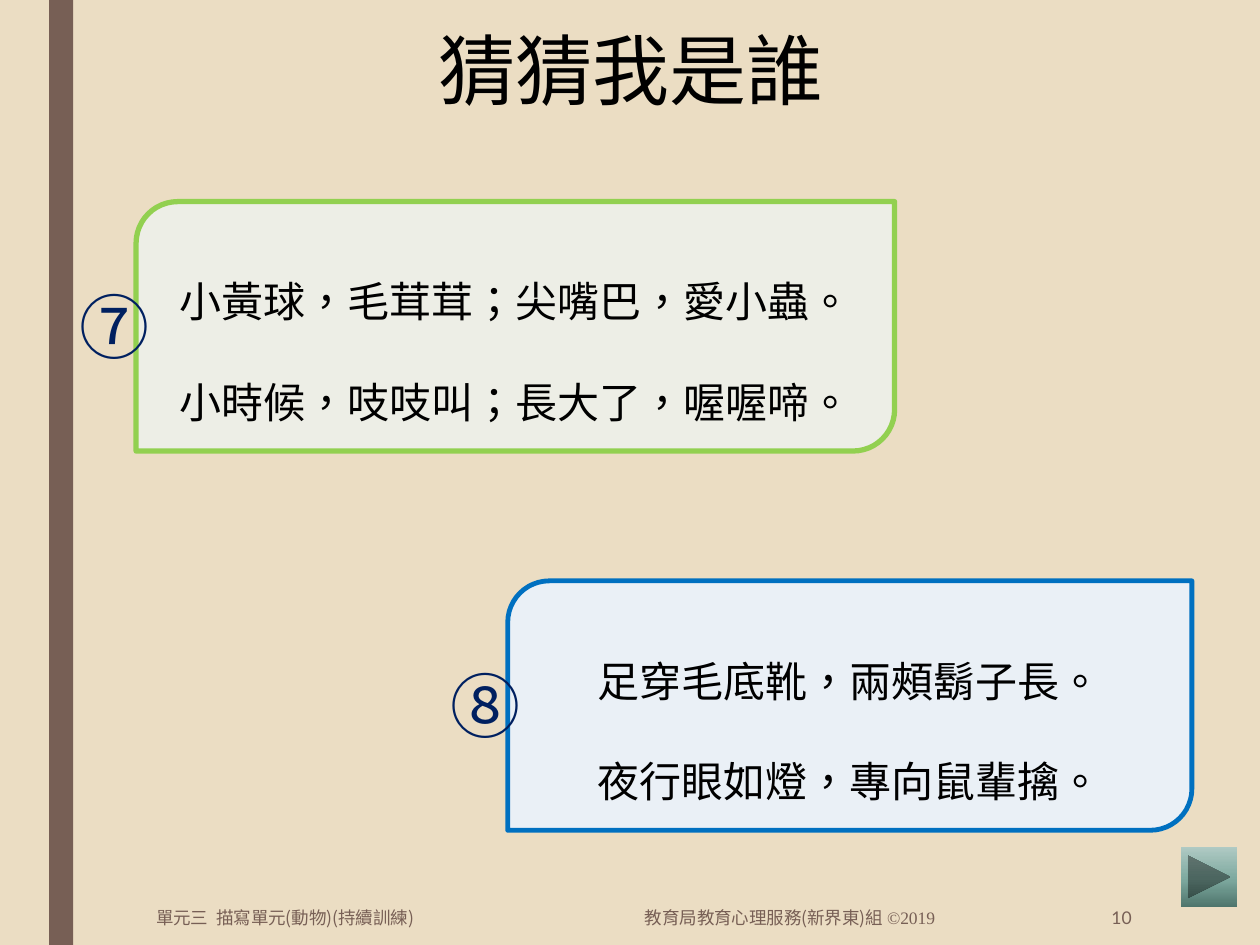
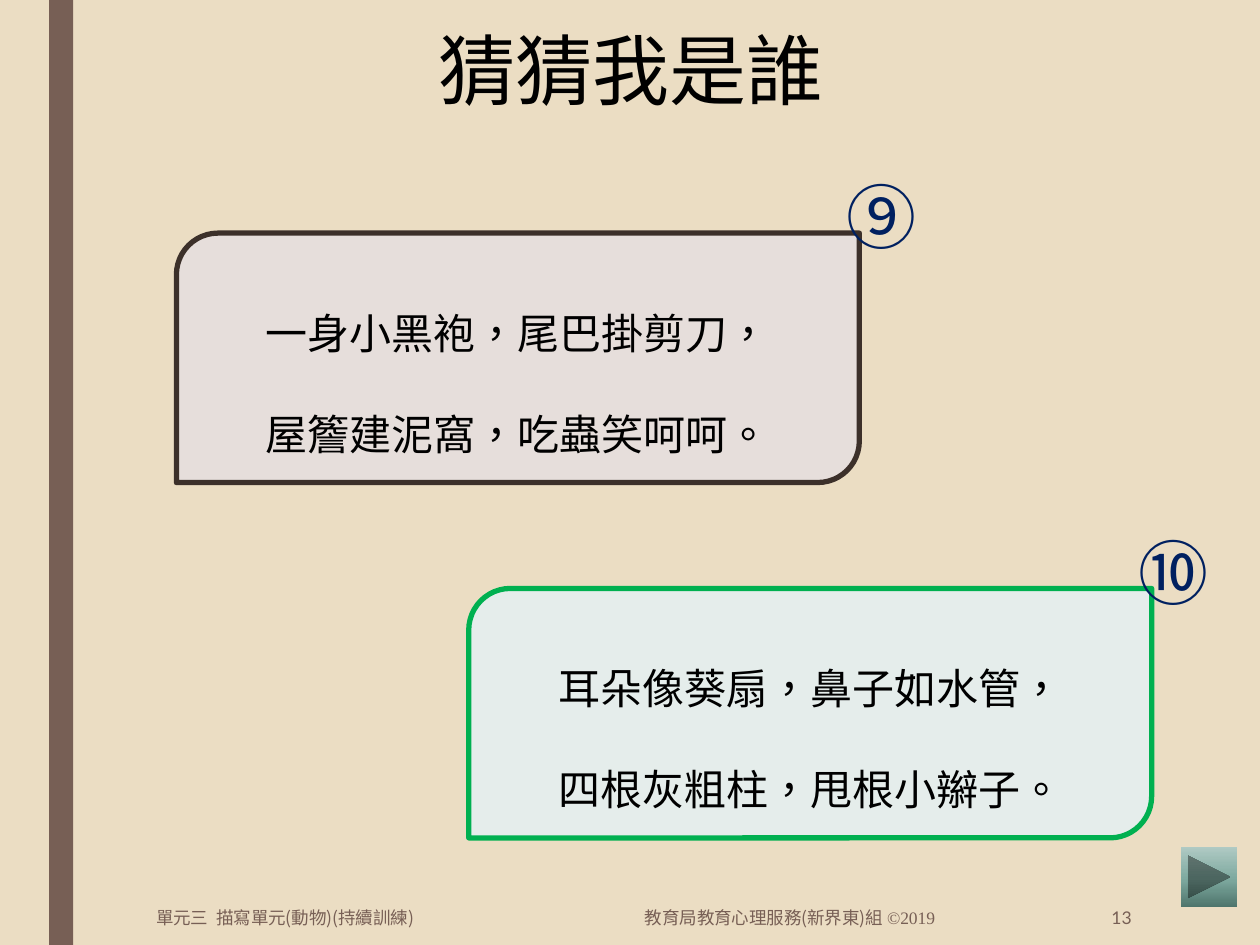
from lxml.etree import SubElement
from pptx import Presentation
from pptx.dml.color import RGBColor
from pptx.enum.shapes import MSO_SHAPE as Shape
from pptx.enum.text import MSO_ANCHOR as Anchor, PP_ALIGN as Align
from pptx.oxml.ns import qn
from pptx.util import Inches, Pt

COLORS = {
    "background": "EBDDC3", "brown": "775F55", "black": "000000", "navy": "002060",
    "button_dark": "4E756C", "button_mid": "7FAAA0", "button_light": "B0CAC4",
    "lime": "92D050", "lime_tint": "EDEEE6", "blue": "0070C0", "blue_tint": "EAF0F6",
    "coffee": "3C302A", "coffee_tint": "E6DEDB", "green": "00B050", "green_tint": "E5EDEB",
}
CJK_FONT = "Noto Sans CJK SC"
TITLE = "猜猜我是誰"
UNIT = "單元三  描寫單元(動物)(持續訓練)"
OWNER = "教育局教育心理服務(新界東)組 "
COPYRIGHT = "©2019"
CARD_HEIGHT = 1.98
BADGE_SIZE = (0.91, 0.77)
BUTTON_STOPS = [(0, "button_dark"), (48, "button_mid"), (100, "button_light")]

SLIDES = [
    {"number": "10", "badge_side": "left", "riddles": [
        {"badge": "⑦", "place": (1.08, 1.6, 6.02), "color": "lime", "line": 3,
         "verses": ["小黃球，毛茸茸；尖嘴巴，愛小蟲。", "小時候，吱吱叫；長大了，喔喔啼。"]},
        {"badge": "⑧", "place": (4.03, 4.61, 5.43), "color": "blue", "line": 2.75,
         "verses": ["足穿毛底靴，兩頰鬍子長。", "夜行眼如燈，專向鼠輩擒。"]},
    ]},
    {"number": "13", "badge_side": "corner", "riddles": [
        {"badge": "⑨", "place": (1.4, 1.85, 5.42), "color": "coffee", "line": 3,
         "verses": ["一身小黑袍，尾巴掛剪刀，", "屋簷建泥窩，吃蟲笑呵呵。"]},
        {"badge": "⑩", "place": (3.72, 4.67, 5.42), "color": "green", "line": 3,
         "verses": ["耳朵像葵扇，鼻子如水管，", "四根灰粗柱，甩根小辮子。"]},
    ]},
]


def rgb(name):
    return RGBColor.from_string(COLORS[name])


def style_run(run, size, color, font=CJK_FONT):
    run.font.size = Pt(size)
    run.font.name = font
    run.font.color.rgb = rgb(color)
    properties = run._r.get_or_add_rPr()
    properties.set("lang", "zh-TW")
    SubElement(properties, qn("a:ea")).set("typeface", font)


def add_text(slide, box, text, size, color, align=Align.LEFT, anchor=Anchor.TOP, font=CJK_FONT):
    frame = slide.shapes.add_textbox(*map(Inches, box)).text_frame
    frame.word_wrap = True
    frame.vertical_anchor = anchor
    frame.text = text
    paragraph = frame.paragraphs[0]
    paragraph.alignment = align
    style_run(paragraph.runs[0], size, color, font)
    return paragraph


def add_block(slide, kind, box):
    shape = slide.shapes.add_shape(kind, *map(Inches, box))
    shape.shadow.inherit = False
    shape.line.fill.background()
    return shape


def add_band(slide):
    band = add_block(slide, Shape.RECTANGLE, (0.39, 0, 0.19, 7.5))
    band.fill.solid()
    band.fill.fore_color.rgb = rgb("brown")


def add_card(slide, riddle):
    left, top, width = riddle["place"]
    card = add_block(slide, Shape.ROUND_2_DIAG_RECTANGLE, (left, top, width, CARD_HEIGHT))
    card.fill.solid()
    card.fill.fore_color.rgb = rgb(riddle["color"] + "_tint")
    card.line.color.rgb = rgb(riddle["color"])
    card.line.width = Pt(riddle["line"])
    frame = card.text_frame
    frame.vertical_anchor = Anchor.MIDDLE
    frame.text = "\n".join(riddle["verses"])
    for paragraph in frame.paragraphs:
        paragraph.alignment = Align.CENTER
        paragraph.line_spacing = 2.0
        style_run(paragraph.runs[0], 24, "black")


def add_badge(slide, riddle, side):
    left, top, width = riddle["place"]
    if side == "left":
        corner = (left - 0.55, top + 0.6)
    else:
        corner = (left + width - 0.2, top - 0.52)
    add_text(slide, (*corner, *BADGE_SIZE), riddle["badge"], 40, "navy")


def add_next_button(slide):
    button = add_block(slide, Shape.ACTION_BUTTON_FORWARD_OR_NEXT, (9.37, 6.72, 0.45, 0.48))
    button.fill.gradient()
    button.fill.gradient_angle = 90
    stops = button._element.spPr.find(qn("a:gradFill")).find(qn("a:gsLst"))
    for stop in list(stops):
        stops.remove(stop)
    for position, color in BUTTON_STOPS:
        stop = SubElement(stops, qn("a:gs"))
        stop.set("pos", str(position * 1000))
        SubElement(stop, qn("a:srgbClr")).set("val", COLORS[color])


def add_footer(slide, number):
    top, height = 7.06, 0.44
    add_text(slide, (1.14, top, 2.43, height), UNIT, 10, "brown", anchor=Anchor.MIDDLE)
    owner = add_text(slide, (2.37, top, 5.15, height), OWNER, 10, "brown",
                     Align.RIGHT, Anchor.MIDDLE)
    notice = owner.add_run()
    notice.text = COPYRIGHT
    style_run(notice, 10, "brown", "Times New Roman")
    add_text(slide, (7.77, top, 1.31, height), number, 10, "brown",
             Align.RIGHT, Anchor.MIDDLE, "Lato")


def build_slide(presentation, content):
    slide = presentation.slides.add_slide(presentation.slide_layouts[6])
    slide.background.fill.solid()
    slide.background.fill.fore_color.rgb = rgb("background")
    add_band(slide)
    title = add_text(slide, (1.07, 0.22, 7.88, 1.62), TITLE, 44, "black", Align.CENTER)
    title.line_spacing = 0.89
    for riddle in content["riddles"]:
        add_card(slide, riddle)
    for riddle in content["riddles"]:
        add_badge(slide, riddle, content["badge_side"])
    add_next_button(slide)
    add_footer(slide, content["number"])


def main():
    presentation = Presentation()
    presentation.slide_width = Inches(10)
    presentation.slide_height = Inches(7.5)
    for content in SLIDES:
        build_slide(presentation, content)
    presentation.save("out.pptx")


if __name__ == "__main__":
    main()
